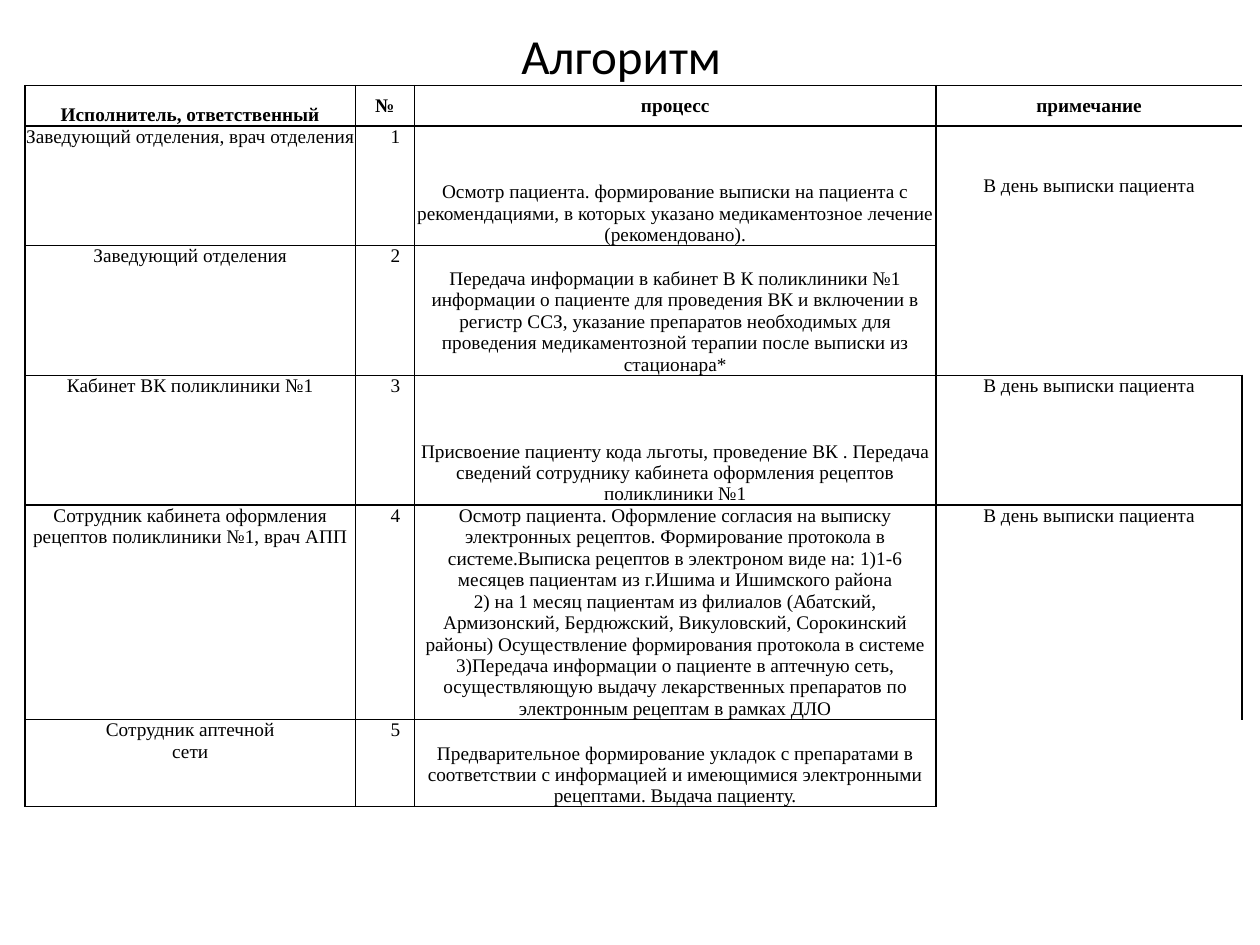
import pptx
import pptx.dml.color
import pptx.enum.text
import pptx.oxml.ns
import pptx.util
from lxml import etree

Inches, Pt = pptx.util.Inches, pptx.util.Pt
ALIGN = pptx.enum.text.PP_ALIGN
ANCHOR = pptx.enum.text.MSO_ANCHOR
BLACK = pptx.dml.color.RGBColor(0, 0, 0)
WHITE = pptx.dml.color.RGBColor(255, 255, 255)

SLIDE_SIZE = (10, 7.5)
TITLE_BOX = (0.43, 0.13, 9, 0.61)
TABLE_BOX = (0.2, 0.68, 9.66, 5.66)
COLUMN_WIDTHS = (2.62, 0.47, 4.14, 2.43)
ROW_HEIGHTS = (0.32, 0.95, 1.03, 1.03, 1.64, 0.69)
SAME_DAY = "В день выписки пациента"

HEADER = ("Исполнитель, ответственный", "№", "процесс", "примечание")
# Performer, process, note; the step number follows from the order
STEPS = (
    ("Заведующий отделения, врач отделения",
     "Осмотр пациента. формирование выписки на пациента с рекомендациями, "
     "в которых указано медикаментозное лечение (рекомендовано).",
     SAME_DAY),
    ("Заведующий отделения",
     "Передача информации в кабинет В К поликлиники №1 информации о пациенте "
     "для проведения ВК и включении в регистр ССЗ, указание препаратов "
     "необходимых для проведения медикаментозной терапии после выписки из "
     "стационара*",
     ""),
    ("Кабинет ВК поликлиники №1",
     "Присвоение пациенту кода льготы, проведение ВК . Передача сведений "
     "сотруднику кабинета оформления рецептов поликлиники №1",
     SAME_DAY),
    ("Сотрудник кабинета оформления рецептов поликлиники №1, врач АПП",
     "Осмотр пациента. Оформление согласия на выписку электронных рецептов. "
     "Формирование протокола в системе.Выписка рецептов в электроном виде на: "
     "1)1-6 месяцев пациентам из г.Ишима и Ишимского района\n"
     "2) на 1 месяц пациентам из филиалов (Абатский, Армизонский, Бердюжский, "
     "Викуловский, Сорокинский районы) Осуществление формирования протокола в "
     "системе 3)Передача информации о пациенте в аптечную сеть, осуществляющую "
     "выдачу лекарственных препаратов по электронным рецептам в рамках ДЛО",
     SAME_DAY),
    ("Сотрудник аптечной\nсети",
     "Предварительное формирование укладок с препаратами в соответствии с "
     "информацией и имеющимися электронными рецептами. Выдача пациенту.",
     ""),
)

# Sides drawn around each note cell; every other cell has all four
NOTE_SIDES = ("LTB", "LT", "LB", "LRTB", "LRT", "L")
# Anchors and line spacings that differ from the rule of their column
ANCHORS = {(0, 0): ANCHOR.BOTTOM, (1, 3): ANCHOR.MIDDLE}
LINE_SPACINGS = {(0, 0): 0.95, (5, 2): 0.97}


def draw_borders(cell, sides):
    properties = cell._tc.get_or_add_tcPr()
    for side in "LRTB":
        line = etree.SubElement(properties, pptx.oxml.ns.qn("a:ln" + side))
        if side in sides:
            line.set("w", str(Pt(1)))
            fill = etree.SubElement(line, pptx.oxml.ns.qn("a:solidFill"))
            etree.SubElement(fill, pptx.oxml.ns.qn("a:srgbClr"), val=str(BLACK))
        else:
            line.set("w", "0")
            etree.SubElement(line, pptx.oxml.ns.qn("a:noFill"))


def default_anchor(row, column):
    if row == 0:
        return ANCHOR.MIDDLE
    return ANCHOR.BOTTOM if column == 2 else ANCHOR.TOP


def fill_cell(cell, row, column, text):
    draw_borders(cell, NOTE_SIDES[row] if column == 3 else "LRTB")
    cell.fill.solid()
    cell.fill.fore_color.rgb = WHITE
    cell.margin_left = cell.margin_right = 0
    cell.margin_top = cell.margin_bottom = 0
    cell.vertical_anchor = ANCHORS.get((row, column), default_anchor(row, column))
    cell.text_frame.text = text
    is_number = row > 0 and column == 1
    for para in cell.text_frame.paragraphs:
        para.alignment = ALIGN.JUSTIFY if is_number else ALIGN.CENTER
        if is_number:
            para._p.get_or_add_pPr().set("indent", str(Inches(0.28)))
        if (row, column) in LINE_SPACINGS:
            para.line_spacing = LINE_SPACINGS[row, column]
        para.font.size = Pt(11)
        for span in para.runs:
            span.font.name = "Times New Roman"
            span.font.size = Pt(11)
            span.font.bold = row == 0
            span.font.color.rgb = BLACK


def add_steps_table(page, box):
    rows = [HEADER] + [
        (performer, str(number), process, note)
        for number, (performer, process, note) in enumerate(STEPS, 1)
    ]
    frame = page.shapes.add_table(len(rows), len(HEADER), *map(Inches, box))
    table = frame.table
    table.first_row = table.horz_banding = False
    for column, width in zip(table.columns, COLUMN_WIDTHS):
        column.width = Inches(width)
    for row, height in zip(table.rows, ROW_HEIGHTS):
        row.height = Inches(height)
    for row, texts in enumerate(rows):
        for column, text in enumerate(texts):
            fill_cell(table.cell(row, column), row, column, text)


def set_title(page, box):
    title = page.shapes.title
    title.left, title.top, title.width, title.height = map(Inches, box)
    title.text_frame.text = "Алгоритм"
    title.text_frame.vertical_anchor = ANCHOR.MIDDLE
    para = title.text_frame.paragraphs[0]
    para.alignment = ALIGN.CENTER
    font = para.runs[0].font
    font.name, font.size = "Calibri", Pt(28)
    font.color.rgb = BLACK
    # The title lies in front of the table
    page.shapes._spTree.append(title._element)


def main():
    deck = pptx.Presentation()
    deck.slide_width, deck.slide_height = map(Inches, SLIDE_SIZE)
    page = deck.slides.add_slide(deck.slide_layouts[5])
    add_steps_table(page, TABLE_BOX)
    set_title(page, TITLE_BOX)
    deck.save("out.pptx")


if __name__ == "__main__":
    main()
